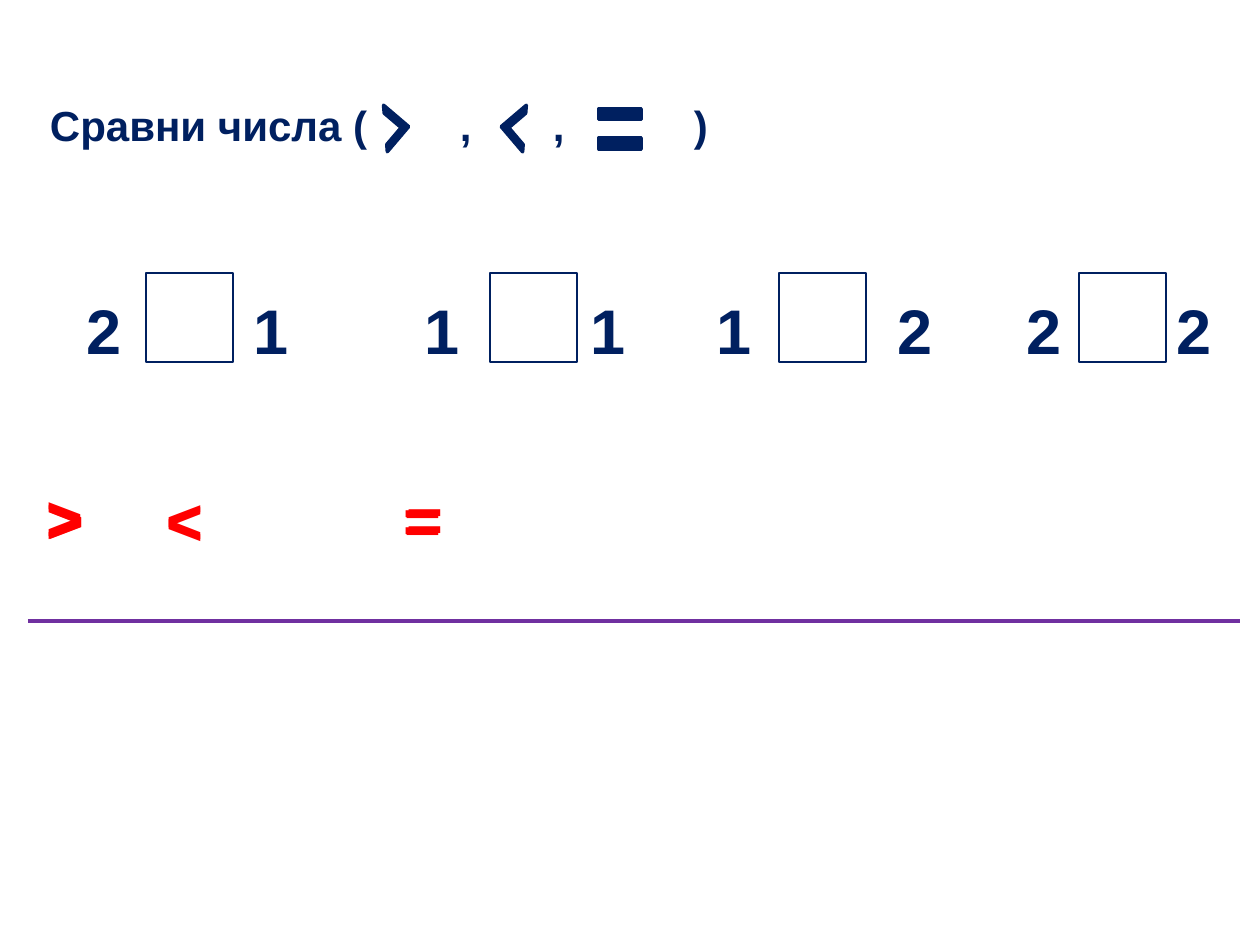
"""Build a slide for comparing the numbers 1 and 2 with the signs >, < and =."""
from lxml.etree import SubElement
from pptx import Presentation
from pptx.dml.color import RGBColor
from pptx.enum.shapes import MSO_CONNECTOR, MSO_SHAPE
from pptx.enum.text import MSO_ANCHOR, PP_ALIGN
from pptx.oxml.ns import qn
from pptx.util import Emu, Pt

COLORS = {"navy": "002060", "red": "FF0000", "purple": "7030A0"}
TITLE = "Сравни числа (\t,\t,\t)"
TITLE_TABS = (410, 503, 644)
COMPARISONS = [
    (("2", 74), 146, ("1", 241)),
    (("1", 412), 490, ("1", 578)),
    (("1", 704), 779, ("2", 885)),
    (("2", 1014), 1079, ("2", 1164)),
]
SIGN_CARDS = {
    ">": [(35, 474), (34, 471), (34, 474)],
    "<": [(154, 474), (154, 476)],
    "=": [(391, 474), (394, 473), (392, 475)],
}
TITLE_SIGNS = [
    (MSO_SHAPE.HALF_FRAME, (369, 112, 33, 33), (0.171, 0.155), 40.4, True),
    (MSO_SHAPE.HALF_FRAME, (508, 112, 33, 33), (0.171, 0.155), 319.6, False),
    (MSO_SHAPE.MATH_EQUAL, (591, 66, 58, 126), (0.085, 0.146), 0, False),
]
CARD_WIDTH, CARD_HEIGHT = 87, 89
DIGIT_WIDTH, DIGIT_TOP, SQUARE_TOP = 60, 285, 273


def px(length):
    return Emu(round(length * 914400 / 126))


def color(name):
    return RGBColor.from_string(COLORS[name])


def write(shape, text, size=36, ink="navy", tabs=(), inset=None):
    frame = shape.text_frame
    frame.word_wrap = True
    frame.vertical_anchor = MSO_ANCHOR.TOP
    if inset is not None:
        frame.margin_left = px(inset)
    paragraph = frame.paragraphs[0]
    paragraph.text = text
    paragraph.alignment = PP_ALIGN.LEFT
    if tabs:
        tab_list = SubElement(paragraph._p.get_or_add_pPr(), qn("a:tabLst"))
        for position in tabs:
            SubElement(tab_list, qn("a:tab"), pos=str(px(position)), algn="l")
    for run in paragraph.runs:
        run.font.name = "Arial"
        run.font.size = Pt(size)
        run.font.bold = True
        run.font.color.rgb = color(ink)


def add_text(slide, text, *box, **style):
    write(slide.shapes.add_textbox(*map(px, box)), text, **style)


def add_outlined(slide, kind, box, line_width, filled=False):
    shape = slide.shapes.add_shape(kind, *map(px, box))
    shape.shadow.inherit = False
    if filled:
        shape.fill.solid()
        shape.fill.fore_color.rgb = color("navy")
    else:
        shape.fill.background()
    shape.line.color.rgb = color("navy")
    shape.line.width = Pt(line_width)
    return shape


def main():
    presentation = Presentation()
    presentation.slide_width, presentation.slide_height = px(1260), px(945)
    slide = presentation.slides.add_slide(presentation.slide_layouts[5])

    title = slide.shapes.title
    title.left, title.top, title.width, title.height = map(px, (28, 93, 1213, 63))
    write(title, TITLE, size=24, tabs=TITLE_TABS, inset=22)

    divider = slide.shapes.add_connector(
        MSO_CONNECTOR.STRAIGHT, px(28), px(621), px(1240), px(621))
    divider.line.color.rgb = color("purple")
    divider.line.width = Pt(2.25)
    SubElement(divider._element.spPr, qn("a:effectLst"))

    for kind, box, adjustments, rotation, flipped in TITLE_SIGNS:
        sign = add_outlined(slide, kind, box, 2, filled=True)
        for index, value in enumerate(adjustments):
            sign.adjustments[index] = value
        sign.rotation = rotation
        if flipped:
            sign._element.spPr.find(qn("a:xfrm")).set("flipH", "1")

    for first, square_left, second in COMPARISONS:
        for digit, left in (first, second):
            add_text(slide, digit, left, DIGIT_TOP, DIGIT_WIDTH, CARD_HEIGHT)
        square = (square_left, SQUARE_TOP, CARD_WIDTH, CARD_HEIGHT)
        add_outlined(slide, MSO_SHAPE.RECTANGLE, square, 0.75)

    for sign, corners in SIGN_CARDS.items():
        for left, top in corners:
            add_text(slide, sign, left, top, CARD_WIDTH, CARD_HEIGHT, ink="red")

    presentation.save("out.pptx")


if __name__ == "__main__":
    main()
